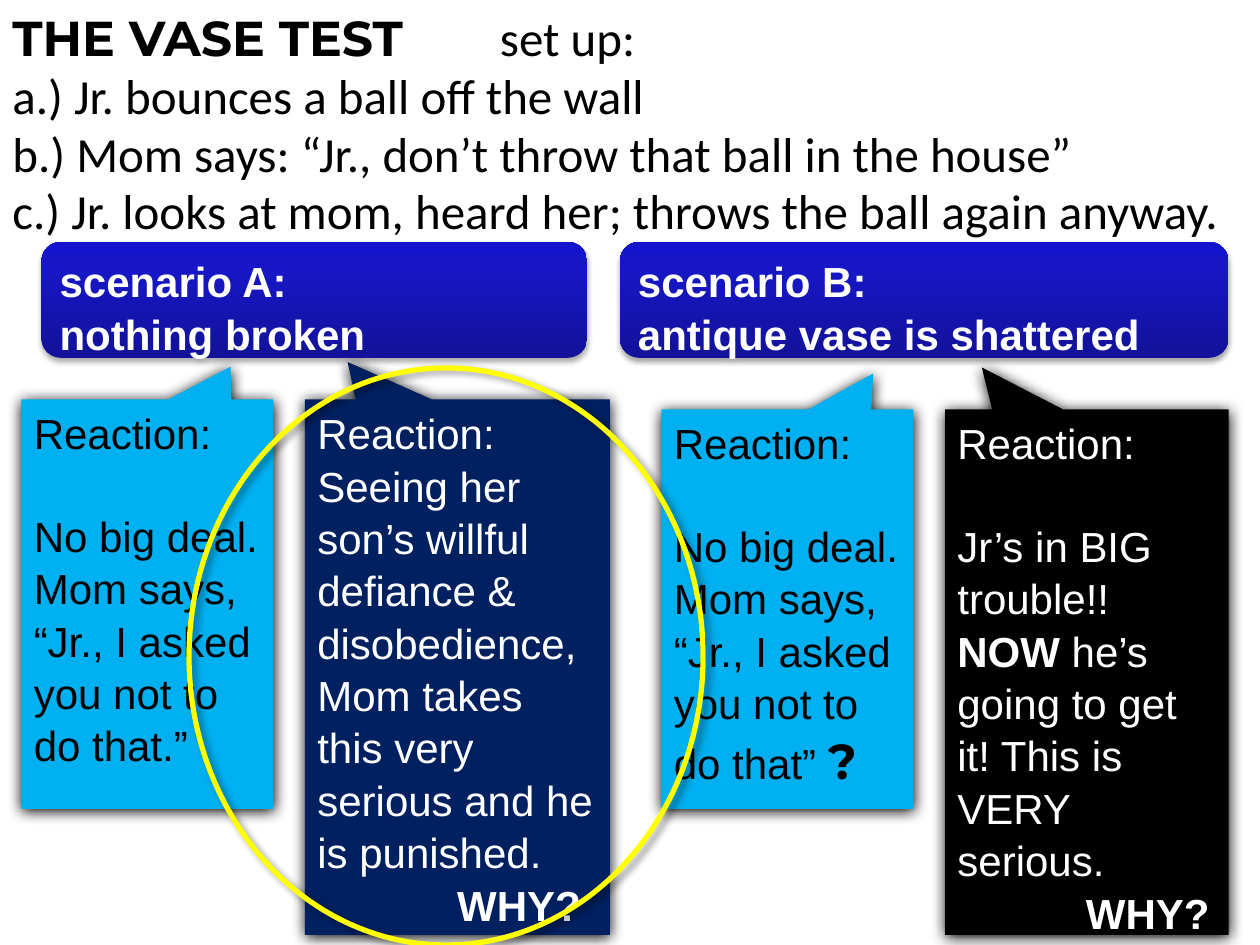
from copy import deepcopy
from lxml.etree import SubElement
from pptx import Presentation
from pptx.dml.color import RGBColor
from pptx.enum.shapes import MSO_SHAPE as Shape
from pptx.enum.text import MSO_ANCHOR as Anchor, PP_ALIGN as Align
from pptx.oxml.ns import qn
from pptx.util import Inches, Pt

BLACK = RGBColor(0x00, 0x00, 0x00)
WHITE = RGBColor(0xFF, 0xFF, 0xFF)
SKY = RGBColor(0x00, 0xB0, 0xF0)
NAVY = RGBColor(0x00, 0x20, 0x60)
YELLOW = RGBColor(0xFF, 0xFF, 0x00)
BANNER_STOPS = [(0, RGBColor(0x12, 0x12, 0x9A)),
                (0.8, RGBColor(0x17, 0x17, 0xC8)),
                (1, RGBColor(0x14, 0x14, 0xCC))]


def write(para, text, font="Arial", size=24, color=BLACK, bold=False):
    span = para.add_run()
    span.text = text
    span.font.name = font
    span.font.size = Pt(size)
    span.font.color.rgb = color
    span.font.bold = bold


class SlideBuilder:
    line_spacing = 1.045
    title_spacing = 0.98
    blank_line = Pt(28.8)

    def __init__(self, page):
        self.page = page

    def shape(self, kind, at, shadow):
        box = self.page.shapes.add_shape(kind, *map(Inches, at))
        box.line.fill.background()
        box.shadow.inherit = False
        alpha, blur, distance, angle = shadow
        effects = box._element.spPr.find(qn("a:effectLst"))
        outer = SubElement(effects, qn("a:outerShdw"), blurRad=str(Pt(blur)),
                           dist=str(Pt(distance)), dir=str(angle * 60000),
                           rotWithShape="0")
        tint = SubElement(outer, qn("a:srgbClr"), val="000000")
        SubElement(tint, qn("a:alpha"), val=str(alpha * 1000))
        return box

    def paragraphs(self, box, count, spacing):
        frame = box.text_frame
        frame.word_wrap = True
        frame.vertical_anchor = Anchor.TOP
        paras = [frame.paragraphs[0]]
        paras += [frame.add_paragraph() for _ in range(count - 1)]
        for para in paras:
            para.alignment = Align.LEFT
            para.line_spacing = spacing
        return paras

    def title(self, heading, label, steps, tab):
        box = self.page.shapes.add_textbox(0, 0, Inches(10), Inches(2))
        first, *rest = self.paragraphs(box, len(steps) + 1, self.title_spacing)
        box.text_frame.vertical_anchor = Anchor.MIDDLE
        tabs = SubElement(first._p.get_or_add_pPr(), qn("a:tabLst"))
        SubElement(tabs, qn("a:tab"), pos=str(Inches(tab)), algn="l")
        write(first, heading + "\t", font="Montserrat", size=28, bold=True)
        write(first, label, font="Calibri", size=28)
        for para, step in zip(rest, steps):
            write(para, step, font="Calibri", size=28)

    def callout(self, at, tip, fill, color, lines, gap=True, why=None):
        box = self.shape(Shape.RECTANGULAR_CALLOUT, at, (100, 8.5, 1, 90))
        box.adjustments[0], box.adjustments[1] = tip
        box.fill.solid()
        box.fill.fore_color.rgb = fill
        content = [[("Reaction:", {})], *lines]
        if why:
            content.append([("WHY?", {"bold": True})])
        paras = self.paragraphs(box, len(content), self.line_spacing)
        for para, spans in zip(paras, content):
            for text, style in spans:
                write(para, text, color=color, **style)
        if gap:
            paras[1].space_before = self.blank_line
        if why:
            paras[-1]._p.get_or_add_pPr().set("marL", str(Inches(why)))

    def banner(self, at, lines):
        box = self.shape(Shape.ROUNDED_RECTANGLE, at, (35, 3.1, 1.8, 90))
        fill = box.fill
        fill.gradient()
        fill.gradient_angle = 90
        last = fill.gradient_stops[1]._gs
        last.addnext(deepcopy(last))
        for stop, (position, color) in zip(fill.gradient_stops, BANNER_STOPS):
            stop.position = position
            stop.color.rgb = color
        paras = self.paragraphs(box, len(lines), self.line_spacing)
        for para, line in zip(paras, lines):
            write(para, line, color=WHITE, bold=True)

    def ring(self, at):
        oval = self.shape(Shape.OVAL, at, (40, 4, 3, 45))
        oval.fill.background()
        oval.line.color.rgb = YELLOW
        oval.line.width = Pt(3)


def main():
    deck = Presentation()
    deck.slide_width, deck.slide_height = Inches(10), Inches(7.5)
    slide = SlideBuilder(deck.slides.add_slide(deck.slide_layouts[6]))

    slide.title("THE VASE TEST", "set up:", [
        "a.) Jr. bounces a ball off the wall",
        "b.) Mom says: “Jr., don’t throw that ball in the house”",
        "c.) Jr. looks at mom, heard her; throws the ball again anyway.",
    ], tab=3.87)

    slide.callout((0.17, 3.17, 2, 3.25), (0.33, -0.58), SKY, BLACK, [
        [("No big deal.", {})],
        [("Mom says,", {})],
        [("“Jr., I asked you not to do that.”", {})],
    ])
    slide.callout((2.42, 3.17, 2.42, 4.25), (-0.36, -0.57), NAVY, WHITE, [
        [("Seeing her son’s willful defiance & disobedience, "
          "Mom takes this very serious and he is punished.", {})],
    ], gap=False, why=1.11)
    slide.callout((5.25, 3.25, 2, 3.17), (0.34, -0.59), SKY, BLACK, [
        [("No big deal. Mom says, “Jr., I asked you not to do that” ", {}),
         ("?", {"font": "Montserrat", "size": 28, "bold": True})],
    ])
    slide.callout((7.5, 3.25, 2.25, 4.17), (-0.37, -0.58), BLACK, WHITE, [
        [("Jr’s in BIG trouble!! ", {}), ("NOW", {"bold": True}),
         (" he’s going to get it! This is VERY serious.", {})],
    ], why=1.02)

    slide.banner((0.33, 1.92, 4.33, 0.92), ["scenario A:", "nothing broken"])
    slide.banner((4.92, 1.92, 4.83, 0.92),
                 ["scenario B:", "antique vase is shattered"])
    slide.ring((1.5, 2.92, 4.08, 4.58))

    deck.save("out.pptx")


if __name__ == "__main__":
    main()
